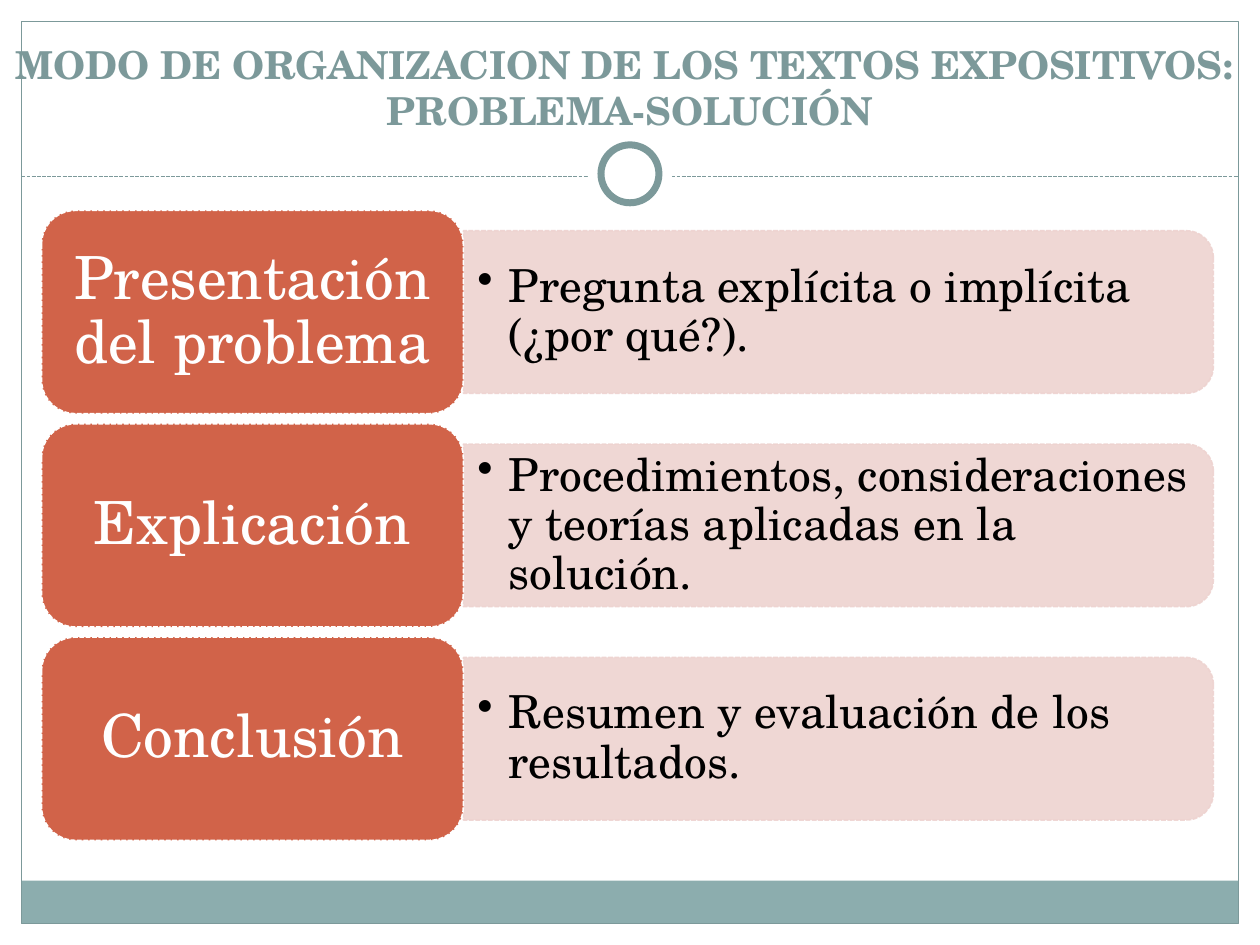
from dataclasses import dataclass

from lxml.etree import SubElement
from pptx import Presentation
from pptx.dml.color import RGBColor
from pptx.enum.dml import MSO_LINE
from pptx.enum.shapes import MSO_CONNECTOR, MSO_SHAPE
from pptx.enum.text import MSO_ANCHOR, PP_ALIGN
from pptx.oxml.ns import qn
from pptx.util import Inches, Pt


@dataclass(frozen=True)
class Theme:
    font: str = "TeX Gyre Schola"
    white: str = "FFFFFF"
    black: str = "000000"
    teal: str = "7C999A"
    footer: str = "8CADAE"
    label: str = "D16349"
    detail: str = "EED3D0"
    title_size: int = 22
    label_size: int = 34
    detail_size: int = 26


THEME = Theme()
WIDTH, HEIGHT = 10, 7.5
STEPS = [
    ("Presentación del problema", "Pregunta explícita o implícita (¿por qué?)."),
    ("Explicación", "Procedimientos, consideraciones y teorías aplicadas en la solución."),
    ("Conclusión", "Resumen y evaluación de los resultados."),
]


def style_line(line, color, width, dash=None):
    line.color.rgb = RGBColor.from_string(color)
    line.width = Pt(width)
    if dash:
        line.dash_style = dash


def set_opacity(shape, percent):
    for color in shape._element.spPr.iter(qn("a:srgbClr")):
        SubElement(color, qn("a:alpha"), val=str(percent * 1000))


def add_box(slide, kind, box, fill=None, line=None, width=0.75, dash=None):
    shape = slide.shapes.add_shape(kind, *map(Inches, box))
    shape.shadow.inherit = False
    if fill:
        shape.fill.solid()
        shape.fill.fore_color.rgb = RGBColor.from_string(fill)
    else:
        shape.fill.background()
    if line:
        style_line(shape.line, line, width, dash)
    else:
        shape.line.fill.background()
    return shape


def write_text(shape, text, *, size, color, bold=False, align=PP_ALIGN.CENTER,
               anchor=MSO_ANCHOR.MIDDLE, insets=(0, 0), spacing=None, bullet=False):
    """Fill a shape with one paragraph; insets are horizontal and vertical inches."""
    frame = shape.text_frame
    frame.word_wrap = True
    frame.vertical_anchor = anchor
    frame.margin_left = frame.margin_right = Inches(insets[0])
    frame.margin_top = frame.margin_bottom = Inches(insets[1])
    paragraph = frame.paragraphs[0]
    paragraph.text = text
    paragraph.alignment = align
    paragraph.line_spacing = spacing
    for run in paragraph.runs:
        run.font.name = THEME.font
        run.font.size = Pt(size)
        run.font.bold = bold
        run.font.color.rgb = RGBColor.from_string(color)
    if bullet:
        properties = paragraph._p.get_or_add_pPr()
        properties.set("marL", str(Inches(0.25)))
        properties.set("indent", str(-Inches(0.25)))
        SubElement(properties, qn("a:buChar"), char="•")


def add_frame(slide, box):
    """Border, footer band, dashed divider and the ring at its middle."""
    left, top, width, height = box
    footer_height = 0.34
    add_box(slide, MSO_SHAPE.RECTANGLE,
            (left, top + height - footer_height, width, footer_height), THEME.footer)
    add_box(slide, MSO_SHAPE.RECTANGLE, box, line=THEME.teal)

    divider = top + 1.23
    connector = slide.shapes.add_connector(
        MSO_CONNECTOR.STRAIGHT, *map(Inches, (left, divider, left + width, divider)))
    style_line(connector.line, THEME.teal, 0.75, MSO_LINE.SQUARE_DOT)
    SubElement(connector._element.spPr, qn("a:effectLst"))

    center_x, center_y = left + width / 2, divider - 0.02
    for diameter, line in ((0.67, None), (0.46, THEME.teal)):
        add_box(slide, MSO_SHAPE.OVAL,
                (center_x - diameter / 2, center_y - diameter / 2, diameter, diameter),
                THEME.white, line, width=4)


def add_title(slide, box):
    title = slide.shapes.add_textbox(*map(Inches, box))
    write_text(title,
               "MODO DE ORGANIZACION DE LOS TEXTOS EXPOSITIVOS: \vPROBLEMA-SOLUCIÓN",
               size=THEME.title_size, color=THEME.teal, bold=True,
               anchor=MSO_ANCHOR.BOTTOM, insets=(0, 0.05))


def add_step(slide, box, label, detail):
    """A label block with a detail panel, rounded on its right, beside it."""
    left, top, width, height = box
    label_width = width * 0.36
    panel_left, panel_width = left + label_width, width - label_width
    panel_height = height * 0.8
    center_x, center_y = panel_left + panel_width / 2, top + height / 2

    # The preset rounds its top corners, so a quarter turn moves them right.
    panel = add_box(slide, MSO_SHAPE.ROUND_2_SAME_RECTANGLE,
                    (center_x - panel_height / 2, center_y - panel_width / 2,
                     panel_height, panel_width),
                    THEME.detail, THEME.detail, 0.9, MSO_LINE.SQUARE_DOT)
    panel.rotation = 90
    set_opacity(panel, 90)

    text_height = panel_height * 0.9
    text = slide.shapes.add_textbox(*map(Inches, (
        panel_left, center_y - text_height / 2, panel_width * 0.99, text_height)))
    write_text(text, detail, size=THEME.detail_size, color=THEME.black,
               align=PP_ALIGN.LEFT, insets=(0.11, 0.05), spacing=0.9, bullet=True)

    block = add_box(slide, MSO_SHAPE.ROUNDED_RECTANGLE, (left, top, label_width, height),
                    THEME.label, THEME.white, 0.9, MSO_LINE.SQUARE_DOT)
    write_text(block, label, size=THEME.label_size, color=THEME.white,
               insets=(0.14, 0.07), spacing=0.9)


def add_steps(slide, box, steps, gap=0.08):
    left, top, width, height = box
    row_height = (height - gap * (len(steps) - 1)) / len(steps)
    for index, (label, detail) in enumerate(steps):
        row_top = top + index * (row_height + gap)
        add_step(slide, (left, row_top, width, row_height), label, detail)


def main():
    presentation = Presentation()
    presentation.slide_width = Inches(WIDTH)
    presentation.slide_height = Inches(HEIGHT)
    slide = presentation.slides.add_slide(presentation.slide_layouts[6])
    margin = 0.17
    add_frame(slide, (margin, margin, WIDTH - 2 * margin, HEIGHT - 2 * margin))
    add_title(slide, (0, 0.13, WIDTH, 0.98))
    add_steps(slide, (0.33, 1.67, 9.3, 5), STEPS)
    presentation.save("out.pptx")


if __name__ == "__main__":
    main()
